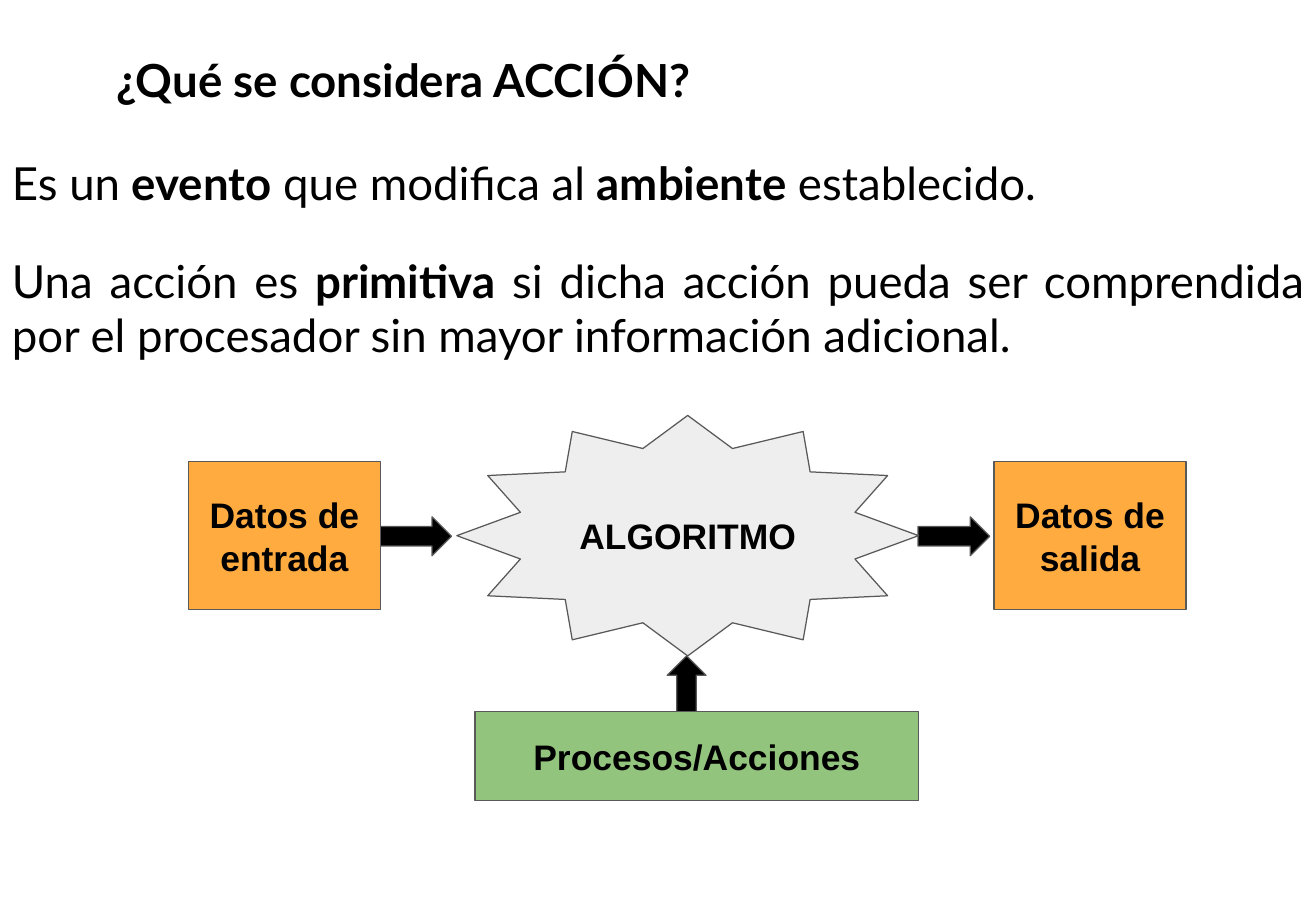
from pptx import Presentation
from pptx import util as u
from pptx.dml.color import RGBColor
from pptx.enum import shapes, text

PX = 9144  # EMU per px, 100 px to the inch
SLIDE_W, SLIDE_H = 1083, 750

BLACK = RGBColor(0x00, 0x00, 0x00)
OUTLINE = RGBColor(0x59, 0x59, 0x59)
ORANGE = RGBColor(0xFF, 0xAB, 0x40)
GREEN = RGBColor(0x93, 0xC4, 0x7D)
GRAY = RGBColor(0xEE, 0xEE, 0xEE)

KIND = shapes.MSO_SHAPE
ALIGN = text.PP_ALIGN
ANCHOR = text.MSO_ANCHOR

# (left, top, width, height), vertical inset, alignment, anchor, [(words, bold)]
PARAGRAPHS = [
    ((19, 4, 626, 122), 5, ALIGN.CENTER, ANCHOR.MIDDLE,
     [("¿Qué se considera ACCIÓN?", True)]),
    ((0, 118, SLIDE_W, 66), 10, ALIGN.LEFT, ANCHOR.TOP,
     [("Es un ", False), ("evento", True), (" que modifica al ", False),
      ("ambiente", True), (" establecido.", False)]),
    ((0, 198, SLIDE_W, 111), 10, ALIGN.JUSTIFY, ANCHOR.TOP,
     [("Una acción es ", False), ("primitiva", True),
      (" si dicha acción pueda ser comprendida por el procesador"
       " sin mayor información adicional.", False)]),
]

# center x, center y, rotation
ARROW_W, ARROW_H = 32, 59
FLOW_Y = 441
ARROWS = [(565, 569, 0), (342, FLOW_Y, 90), (785, FLOW_Y, 90)]

# words, preset, fill, left, center y, width, height
STAGES = [
    ("Datos de entrada", KIND.RECTANGLE, ORANGE, 155, FLOW_Y, 158, 122),
    ("Datos de salida", KIND.RECTANGLE, ORANGE, 818, FLOW_Y, 158, 122),
    ("Procesos/Acciones", KIND.RECTANGLE, GREEN, 391, 622, 365, 73),
    ("ALGORITMO", KIND.STAR_12_POINT, GRAY, 376, FLOW_Y, 380, 198),
]


def emu(*lengths):
    return [u.Emu(length * PX) for length in lengths]


def write(shape, runs, font, size, inset=10, align=ALIGN.CENTER,
          anchor=ANCHOR.MIDDLE):
    frame = shape.text_frame
    side, vertical = emu(10, inset)
    layout = {"word_wrap": True, "vertical_anchor": anchor,
              "margin_left": side, "margin_right": side,
              "margin_top": vertical, "margin_bottom": vertical}
    for name, value in layout.items():
        setattr(frame, name, value)
    paragraph = frame.paragraphs[0]
    paragraph.alignment = align
    for words, bold in runs:
        run = paragraph.add_run()
        run.text = words
        for name, value in {"name": font, "size": u.Pt(size),
                            "bold": bold}.items():
            setattr(run.font, name, value)
        run.font.color.rgb = BLACK


def add_outlined(slide, preset, fill, box):
    shape = slide.shapes.add_shape(preset, *emu(*box))
    shape.shadow.inherit = False
    shape.fill.solid()
    shape.fill.fore_color.rgb = fill
    shape.line.color.rgb = OUTLINE
    shape.line.width = u.Pt(0.75)
    return shape


def main():
    deck = Presentation()
    deck.slide_width, deck.slide_height = emu(SLIDE_W, SLIDE_H)
    slide = deck.slides.add_slide(deck.slide_layouts[6])

    for x, y, rotation in ARROWS:
        box = (x - ARROW_W / 2, y - ARROW_H / 2, ARROW_W, ARROW_H)
        arrow = add_outlined(slide, KIND.UP_ARROW, BLACK,
                             [round(length) for length in box])
        arrow.rotation = rotation

    for words, preset, fill, left, y, width, height in STAGES:
        box = (left, y - height // 2, width, height)
        stage = add_outlined(slide, preset, fill, box)
        write(stage, [(words, True)], "Arial", 21)

    for box, inset, align, anchor, runs in PARAGRAPHS:
        paragraph_box = slide.shapes.add_textbox(*emu(*box))
        write(paragraph_box, runs, "Lato", 27, inset, align, anchor)

    deck.save("out.pptx")


if __name__ == "__main__":
    main()
